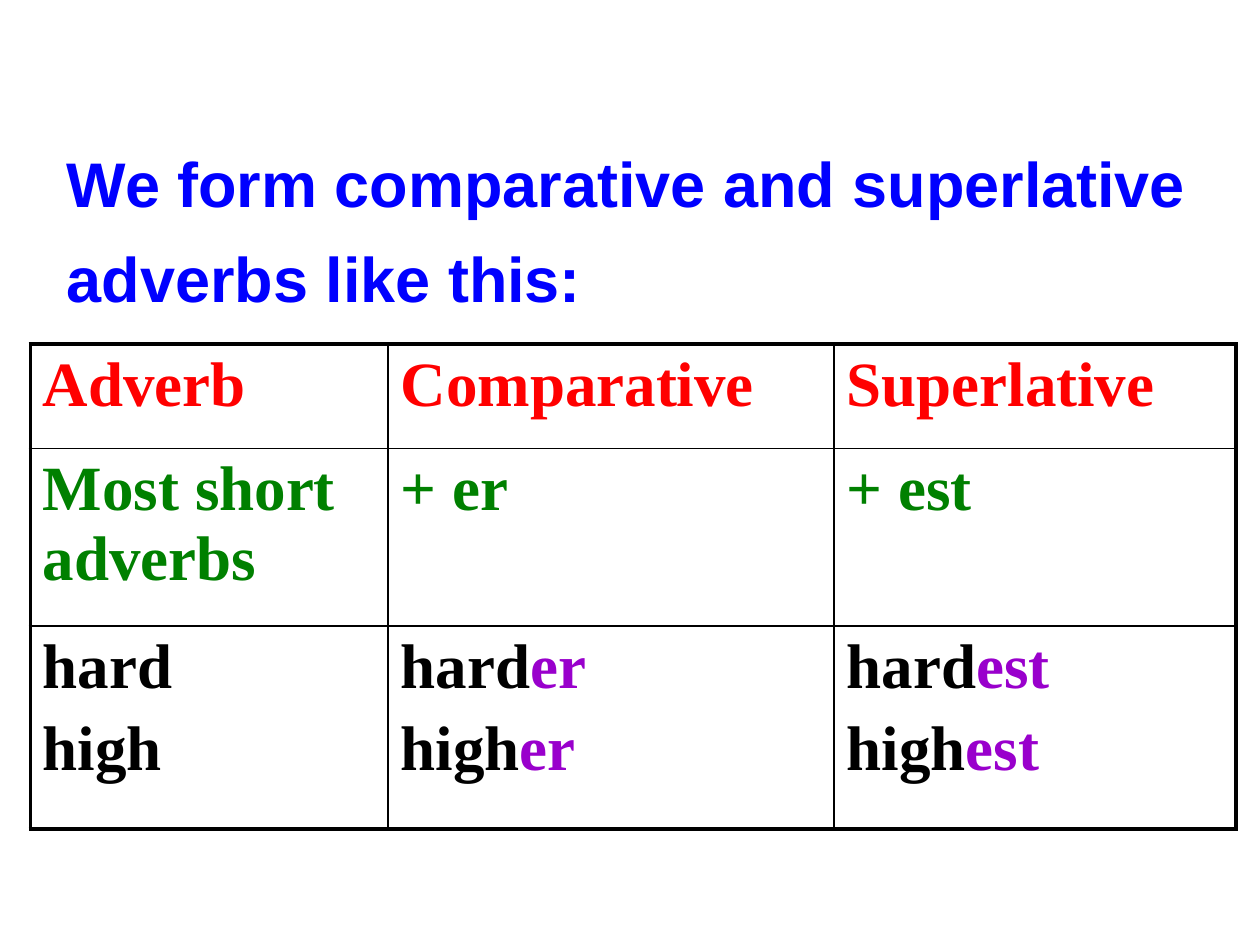
from lxml.etree import SubElement
from pptx import Presentation
from pptx.dml.color import RGBColor
from pptx.enum.text import MSO_ANCHOR, MSO_AUTO_SIZE, PP_ALIGN
from pptx.oxml.ns import qn
from pptx.util import Inches, Pt

BLACK = RGBColor(0x00, 0x00, 0x00)
BLUE = RGBColor(0x00, 0x00, 0xFF)
RED = RGBColor(0xFF, 0x00, 0x00)
GREEN = RGBColor(0x00, 0x80, 0x00)
PURPLE = RGBColor(0x99, 0x00, 0xCC)
OUTER_WIDTH, INNER_WIDTH = Pt(2.25), Pt(1)


def add_border(cell, side, width):
    line = SubElement(cell._tc.get_or_add_tcPr(), qn(f"a:{side}"), w=str(width))
    fill = SubElement(line, qn("a:solidFill"))
    SubElement(fill, qn("a:srgbClr"), val=str(BLACK))


deck = Presentation()
deck.slide_width, deck.slide_height = Inches(10), Inches(7.5)
page = deck.slides.add_slide(deck.slide_layouts[5])

title = page.shapes.title
title.left, title.top = Inches(0.43), Inches(0.95)
title.width, title.height = Inches(9.21), Inches(1.54)
frame = title.text_frame
frame.text = "We form comparative and superlative adverbs like this:"
frame.word_wrap = True
frame.auto_size = MSO_AUTO_SIZE.NONE
frame.vertical_anchor = MSO_ANCHOR.TOP
heading = frame.paragraphs[0]
heading.alignment = PP_ALIGN.LEFT
heading.line_spacing = 1.25
heading.font.name, heading.font.size, heading.font.bold = "Arial", Pt(36), True
heading.font.color.rgb = BLUE

column_widths = [2.84, 3.54, 3.19]
row_heights = [0.83, 1.41, 1.61]
adverbs = ["hard", "high"]
endings = ["", "er", "est"]
rows = [
    [[[(label, RED)]] for label in ("Adverb", "Comparative", "Superlative")],
    [[[(label, GREEN)]] for label in ("Most short adverbs", "+ er", "+ est")],
    [[[(adverb, BLACK), (ending, PURPLE)] for adverb in adverbs] for ending in endings],
]

table = page.shapes.add_table(
    len(rows), len(column_widths), Inches(0.24), Inches(2.73),
    Inches(sum(column_widths)), Inches(sum(row_heights))).table
table.first_row = table.horz_banding = False
for column, width in zip(table.columns, column_widths):
    column.width = Inches(width)
for row, height in zip(table.rows, row_heights):
    row.height = Inches(height)

last_row, last_column = len(rows) - 1, len(column_widths) - 1
for row_index, row in enumerate(rows):
    for column_index, lines in enumerate(row):
        cell = table.cell(row_index, column_index)
        outer_sides = {
            "lnL": column_index == 0,
            "lnR": column_index == last_column,
            "lnT": row_index == 0,
            "lnB": row_index == last_row,
        }
        for side, is_outer in outer_sides.items():
            add_border(cell, side, OUTER_WIDTH if is_outer else INNER_WIDTH)
        cell.fill.background()
        for line_index, spans in enumerate(lines):
            frame = cell.text_frame
            para = frame.add_paragraph() if line_index else frame.paragraphs[0]
            para.space_before = Pt(7.2)
            para.font.name, para.font.size, para.font.bold = "Times New Roman", Pt(36), True
            for text, color in spans:
                if text:
                    span = para.add_run()
                    span.text = text
                    span.font.color.rgb = color

deck.save("out.pptx")
